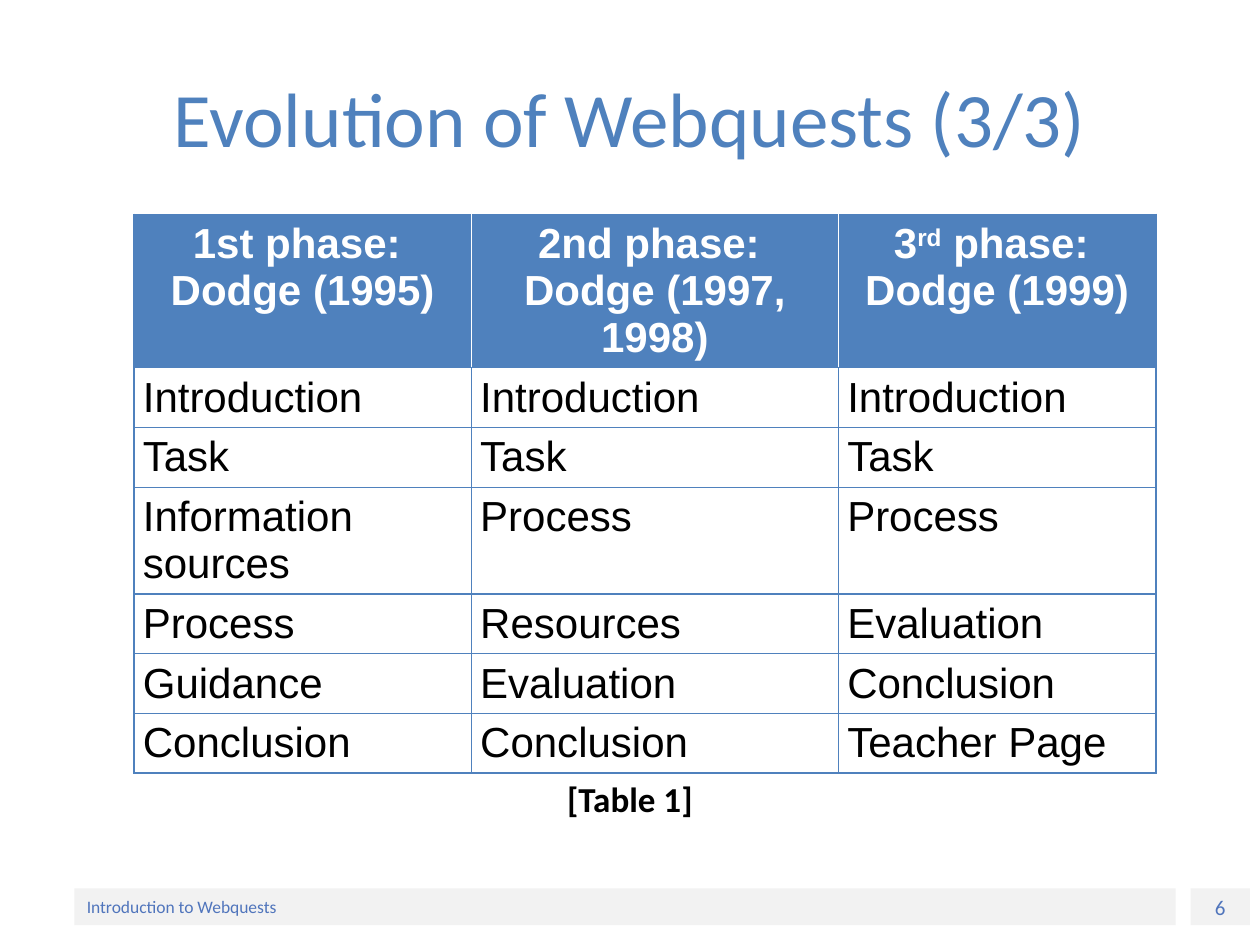
"""Build the slide with the table of Webquest phases."""
from lxml import etree
from pptx import Presentation
from pptx import util as u
from pptx.dml.color import RGBColor
from pptx.enum import shapes, text
from pptx.oxml.ns import qn

BLUE = RGBColor(0x4F, 0x81, 0xBD)
FOOTER_BLUE = RGBColor(0x50, 0x75, 0xBC)
GREY = RGBColor(0xF2, 0xF2, 0xF2)
WHITE = RGBColor(0xFF, 0xFF, 0xFF)
BLACK = RGBColor(0, 0, 0)
LEFT, CENTER = text.PP_ALIGN.LEFT, text.PP_ALIGN.CENTER


def write(frame, content, size, color, font="Calibri", bold=False, align=CENTER,
          anchor=text.MSO_ANCHOR.MIDDLE):
    """Fill a text frame line by line; text between carets is superscript."""
    frame.word_wrap = True
    frame.vertical_anchor = anchor
    for number, line in enumerate(content.split("\n")):
        paragraph = frame.add_paragraph() if number else frame.paragraphs[0]
        paragraph.alignment = align
        paragraph.space_before = u.Pt(0)
        for position, part in enumerate(line.split("^")):
            run = paragraph.add_run()
            run.text = part
            run.font.size, run.font.name, run.font.bold = u.Pt(size), font, bold
            run.font.color.rgb = color
            if position % 2:
                run._r.get_or_add_rPr().set("baseline", "30000")


def add_borders(cell, colors):
    """Draw one-point borders, given as a colour for each side."""
    properties = cell._tc.get_or_add_tcPr()
    for index, side in enumerate("LRTB"):
        line = etree.Element(qn(f"a:ln{side}"), w=str(u.Pt(1)))
        fill = etree.SubElement(line, qn("a:solidFill"))
        etree.SubElement(fill, qn("a:srgbClr"), val=str(colors[side]))
        properties.insert(index, line)


presentation = Presentation()
presentation.slide_width, presentation.slide_height = u.Cm(25.4), u.Cm(19.05)
slide = presentation.slides.add_slide(presentation.slide_layouts[5])

title = slide.shapes.title
title.left, title.top, title.width, title.height = u.Cm(1.27), u.Cm(0.76), u.Cm(22.86), u.Cm(3.18)
write(title.text_frame, "Evolution of Webquests (3/3)", size=44, color=BLUE)

FOOTERS = [
    (24, 1.2, "6", 12, CENTER),
    (1.5, 22.2, "Introduction to Webquests", 10, LEFT),
]
for left, width, content, size, align in FOOTERS:
    bar = slide.shapes.add_shape(shapes.MSO_SHAPE.RECTANGLE, u.Cm(left), u.Cm(17.91),
                                 u.Cm(width), u.Cm(0.74))
    bar.shadow.inherit = False
    bar.fill.solid()
    bar.fill.fore_color.rgb = GREY
    bar.line.fill.background()
    write(bar.text_frame, content, size=size, color=FOOTER_BLUE, align=align)

ROWS = [
    ("1st phase: \nDodge (1995)", "2nd phase: \nDodge (1997, 1998)", "3^rd^ phase: \nDodge (1999)"),
    ("Introduction", "Introduction", "Introduction"),
    ("Task", "Task", "Task"),
    ("Information sources", "Process", "Process"),
    ("Process", "Resources", "Evaluation"),
    ("Guidance", "Evaluation", "Conclusion"),
    ("Conclusion", "Conclusion", "Teacher Page"),
]
COLUMN_WIDTHS = [6.8, 7.4, 6.4]
ROW_HEIGHT = 0.97
table = slide.shapes.add_table(len(ROWS), len(COLUMN_WIDTHS), u.Cm(2.7), u.Cm(4.32),
                               u.Cm(sum(COLUMN_WIDTHS)), u.Cm(ROW_HEIGHT * len(ROWS))).table
table.horz_banding = False
for column, width in zip(table.columns, COLUMN_WIDTHS):
    column.width = u.Cm(width)
for row_index, row in enumerate(ROWS):
    table.rows[row_index].height = u.Cm(ROW_HEIGHT)
    header = row_index == 0
    for column_index, content in enumerate(row):
        cell = table.cell(row_index, column_index)
        cell.margin_left = cell.margin_right = u.Cm(0.18)
        cell.margin_top = cell.margin_bottom = u.Cm(0.13)
        borders = dict.fromkeys("LRTB", BLUE)
        if header:
            cell.fill.solid()
            cell.fill.fore_color.rgb = BLUE
            if column_index > 0:
                borders["L"] = WHITE
            if column_index < len(row) - 1:
                borders["R"] = WHITE
        else:
            cell.fill.background()
        add_borders(cell, borders)
        write(cell.text_frame, content, size=24, color=WHITE if header else BLACK, font="Arial",
              bold=header, align=CENTER if header else LEFT, anchor=text.MSO_ANCHOR.TOP)

caption = slide.shapes.add_textbox(u.Cm(5.08), u.Cm(15.54), u.Cm(15.24), u.Cm(1.6))
write(caption.text_frame, "[Table 1]", size=20, color=BLACK, bold=True,
      anchor=text.MSO_ANCHOR.TOP)

presentation.save("out.pptx")
